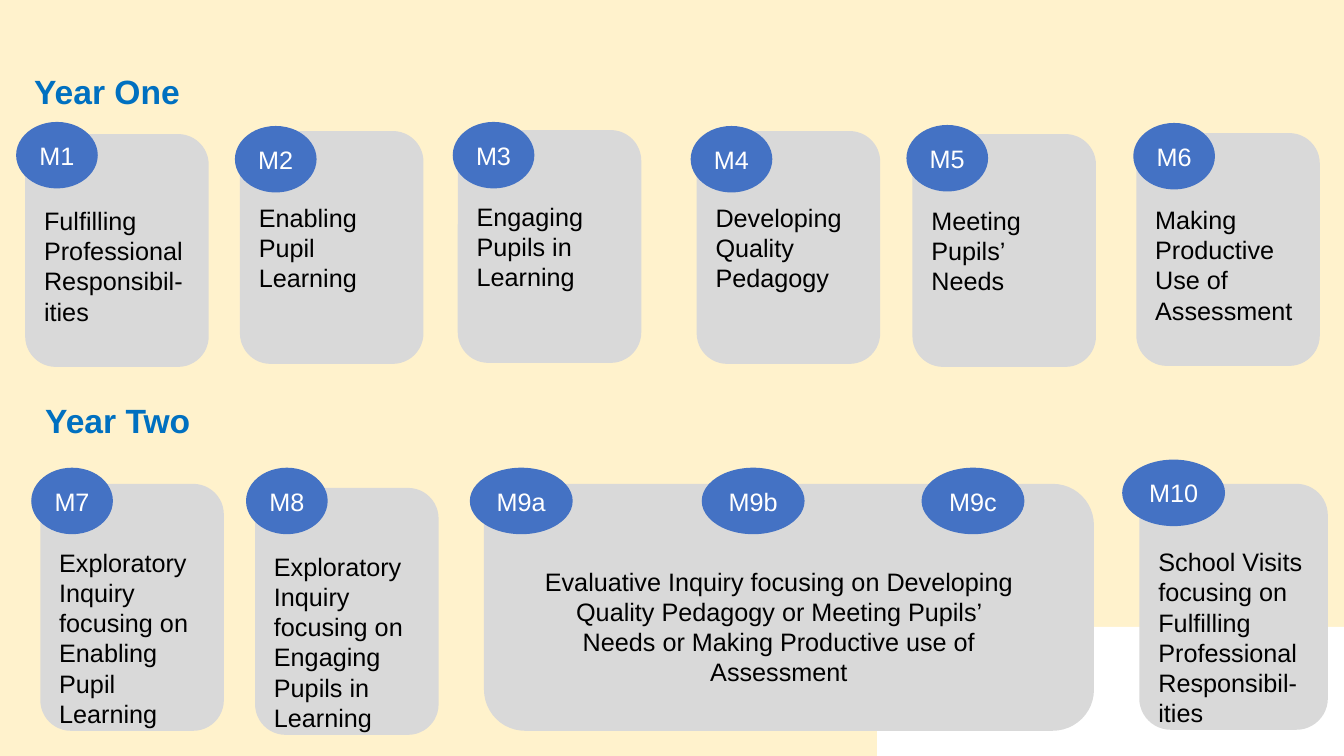
from pptx import Presentation
from pptx import util as u
from pptx.dml.color import RGBColor
from pptx.enum import shapes, text

COLORS = {"cream": "FFF2CC", "card": "D9D9D9", "badge": "4472C4",
          "heading": "0070C0", "black": "000000", "white": "FFFFFF"}
COLS, ROWS = 1333, 750
CELL = u.Inches(0.01)
LINE = 30
CARD_W, BADGE_W, BADGE_H = 182, 81, 66
ROUND, OVAL, RECT = (shapes.MSO_SHAPE.ROUNDED_RECTANGLE, shapes.MSO_SHAPE.OVAL,
                     shapes.MSO_SHAPE.RECTANGLE)

YEAR_ONE = [
    ("M1", 25, 133, (-9, -12), 1, ["Fulfilling Professional Responsibil-ities"]),
    ("M2", 238, 130, (-5, -5), 0, ["Enabling Pupil Learning"]),
    ("M3", 454, 129, (-5, -8), 0, ["Engaging Pupils in Learning"]),
    ("M4", 691, 130, (-6, -5), 0, ["Developing Quality Pedagogy"]),
    ("M5", 905, 133, (-6, -9), 0, ["Meeting Pupils’ Needs"]),
    ("M6", 1127, 132, (-3, -10), 1, ["Making Productive Use of Assessment"]),
]
YEAR_TWO = [
    ("M7", 40, 480, (-9, -16), 2,
     ["Exploratory", "Inquiry focusing on", "Enabling Pupil Learning"]),
    ("M8", 253, 484, (-9, -20), 2,
     ["Exploratory", "Inquiry focusing on", "Engaging Pupils in Learning"]),
]
VISITS = ["School Visits focusing on", "Fulfilling Professional", "Responsibil-ities"]
INQUIRY = ("Evaluative Inquiry focusing on Developing Quality Pedagogy or "
           "Meeting Pupils’ Needs or Making Productive use of Assessment")


def grid(box):
    """Turn a box in grid columns and rows into slide lengths."""
    return [CELL * n for n in box]


def rgb(name):
    """Return a named colour."""
    return RGBColor.from_string(COLORS[name])


def write(sp, paragraphs, color="black", size=18, bold=False,
          align=text.PP_ALIGN.LEFT, anchor=text.MSO_ANCHOR.MIDDLE, lead=0):
    """Write paragraphs into a shape, lowered by a number of lead lines."""
    tf = sp.text_frame
    tf.word_wrap = True
    tf.vertical_anchor = anchor
    tf.margin_top = u.Inches(0.05) + CELL * LINE * lead
    for i, line in enumerate(paragraphs):
        p = tf.add_paragraph() if i else tf.paragraphs[0]
        p.alignment = align
        r = p.add_run()
        r.text = line
        r.font.name = "Arial"
        r.font.size = u.Pt(size)
        r.font.bold = bold
        r.font.color.rgb = rgb(color)


def add_block(s, kind, box, fill=None):
    """Add a flat shape without outline."""
    sp = s.shapes.add_shape(kind, *grid(box))
    sp.shadow.inherit = False
    sp.line.fill.background()
    if fill:
        sp.fill.solid()
        sp.fill.fore_color.rgb = rgb(fill)
    else:
        sp.fill.background()
    return sp


def add_heading(s, box, title):
    """Add the title of a year."""
    sp = s.shapes.add_textbox(*grid(box))
    write(sp, [title], "heading", 24, True, anchor=text.MSO_ANCHOR.TOP)


def add_badge(s, x, y, label, width=BADGE_W):
    """Add the oval that names a module."""
    sp = add_block(s, OVAL, (x, y, width, BADGE_H), "badge")
    write(sp, [label], "white", align=text.PP_ALIGN.CENTER)


def add_card(s, box, label, offset, lead, lines, badge_w=BADGE_W):
    """Add a module card with a badge over its top left corner."""
    write(add_block(s, ROUND, box, "card"), lines, lead=lead)
    add_badge(s, box[0] + offset[0], box[1] + offset[1], label, badge_w)


def add_year(s, cards, height):
    """Add the equal cards of a year."""
    for label, x, y, offset, lead, lines in cards:
        add_card(s, (x, y, CARD_W, height), label, offset, lead, lines)


def add_inquiry(s, box):
    """Add the wide panel shared by three modules."""
    x, y, w, h = box
    add_block(s, ROUND, box, "card")
    sp = add_block(s, ROUND, (x + 39, y + 64, w - 98, h - 90))
    write(sp, [INQUIRY], align=text.PP_ALIGN.CENTER)
    for label, dx in (("M9a", -14), ("M9b", 216), ("M9c", 434)):
        add_badge(s, x + dx, y - 16, label, 102)


def main():
    """Build and save the slide."""
    prs = Presentation()
    prs.slide_width, prs.slide_height = CELL * COLS, CELL * ROWS
    s = prs.slides.add_slide(prs.slide_layouts[6])
    s.background.fill.solid()
    s.background.fill.fore_color.rgb = rgb("cream")
    add_block(s, RECT, (870, 622, COLS - 870, ROWS - 622), "white")
    add_heading(s, (24, 65, 418, 50), "Year One")
    add_year(s, YEAR_ONE, 231)
    add_heading(s, (35, 392, 418, 50), "Year Two")
    add_year(s, YEAR_TWO, 245)
    add_inquiry(s, (480, 480, 605, 245))
    add_card(s, (1130, 480, 187, 244), "M10", (-17, -24), 2, VISITS, 102)
    prs.save("out.pptx")


if __name__ == "__main__":
    main()
